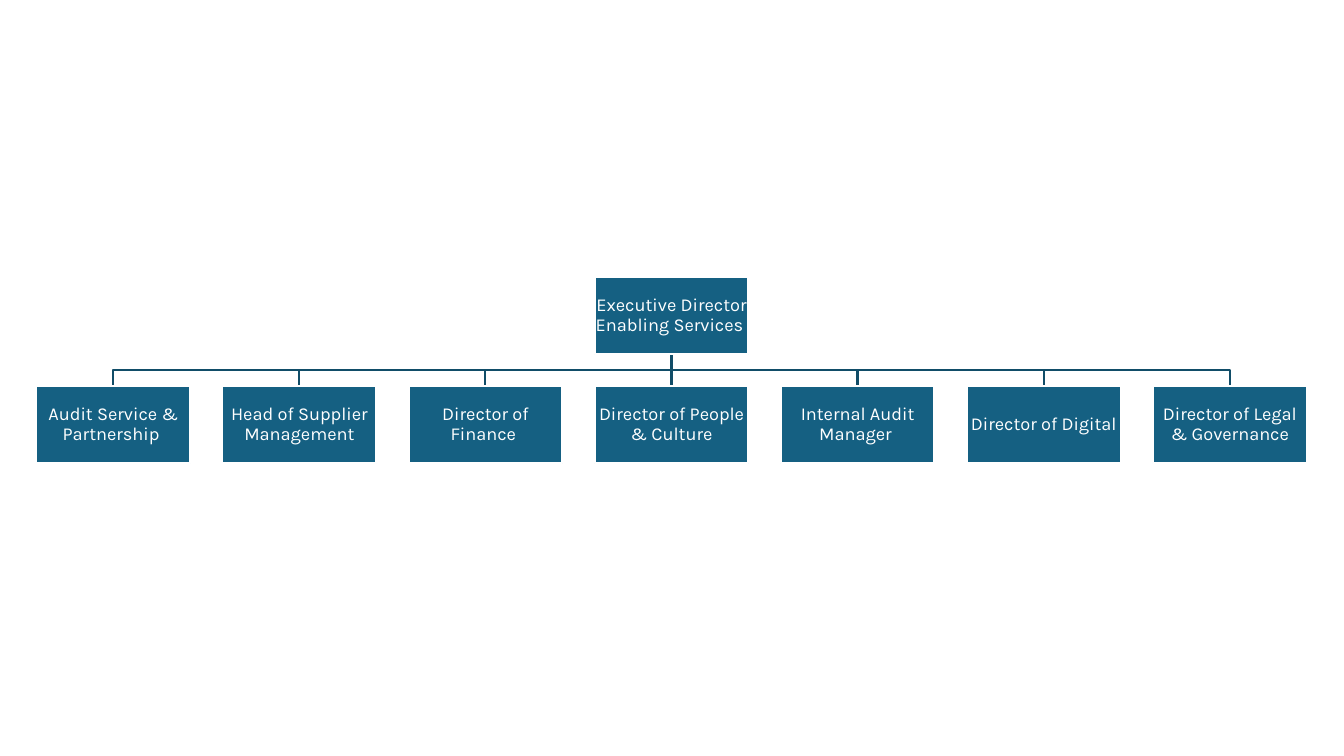
from lxml.etree import SubElement
from pptx import Presentation
from pptx.dml.color import RGBColor
from pptx.enum.shapes import MSO_CONNECTOR, MSO_SHAPE
from pptx.enum.text import MSO_ANCHOR, PP_ALIGN
from pptx.oxml.ns import qn
from pptx.util import Inches, Pt

BLUE = RGBColor(0x15, 0x60, 0x82)
DARK_BLUE = RGBColor(0x11, 0x4D, 0x68)
WHITE = RGBColor(0xFF, 0xFF, 0xFF)

DIRECTOR = "Executive Director\vEnabling Services "
REPORTS = [
    "Audit Service & Partnership ",
    "Head of Supplier Management",
    "Director of Finance ",
    "Director of People & Culture",
    "Internal Audit Manager ",
    "Director of Digital",
    "Director of Legal & Governance",
]


class OrgChart:
    """Boxes on a grid of columns and rows, joined by lines behind them."""

    font_name = "Karla"
    font_size = Pt(13)
    line_width = Pt(1.5)
    inset = Inches(0.01)
    column_gap = 0.21  # share of a box's width
    row_gap = 0.42  # share of a box's height

    def __init__(self, page, left, top, width, columns):
        self.page = page
        self.left, self.top = left, top
        self.box_width = int(width / (columns + (columns - 1) * self.column_gap))
        self.box_height = self.box_width // 2

    def add_box(self, text, column, row):
        box = self.page.shapes.add_shape(
            MSO_SHAPE.RECTANGLE,
            int(self.left + column * self.box_width * (1 + self.column_gap)),
            int(self.top + row * self.box_height * (1 + self.row_gap)),
            self.box_width,
            self.box_height,
        )
        box.shadow.inherit = False
        box.fill.solid()
        box.fill.fore_color.rgb = BLUE
        self.style_line(box, WHITE)

        frame = box.text_frame
        frame.word_wrap = True
        frame.vertical_anchor = MSO_ANCHOR.MIDDLE
        frame.margin_left = frame.margin_right = self.inset
        frame.margin_top = frame.margin_bottom = self.inset
        para = frame.paragraphs[0]
        para.text = text
        para.alignment = PP_ALIGN.CENTER
        para.line_spacing = 0.9
        para.font.name = self.font_name
        para.font.size = self.font_size
        para.font.color.rgb = WHITE
        return box

    def join(self, parent, child):
        start_x = parent.left + parent.width // 2
        start_y = parent.top + parent.height
        end_x = child.left + child.width // 2
        if start_x == end_x:
            link = self.page.shapes.add_connector(
                MSO_CONNECTOR.STRAIGHT, start_x, start_y, end_x, child.top)
            link.begin_connect(parent, 2)
            link.end_connect(child, 0)
            SubElement(link._element.spPr, qn("a:effectLst"))
        else:
            middle_y = (start_y + child.top) // 2
            builder = self.page.shapes.build_freeform(start_x, start_y)
            builder.add_line_segments(
                [(start_x, middle_y), (end_x, middle_y), (end_x, child.top)],
                close=False)
            link = builder.convert_to_shape()
            link.fill.background()
            link.shadow.inherit = False
        self.style_line(link, DARK_BLUE)
        parent._element.addprevious(link._element)

    def style_line(self, shape, color):
        shape.line.color.rgb = color
        shape.line.width = self.line_width


def main():
    deck = Presentation()
    deck.slide_width, deck.slide_height = Inches(13.33), Inches(7.5)
    page = deck.slides.add_slide(deck.slide_layouts[6])
    chart = OrgChart(page, Inches(0.36), Inches(2.75), Inches(12.6), len(REPORTS))

    director = chart.add_box(DIRECTOR, len(REPORTS) // 2, 0)
    for column, title in enumerate(REPORTS):
        chart.join(director, chart.add_box(title, column, 1))

    deck.save("out.pptx")


if __name__ == "__main__":
    main()
